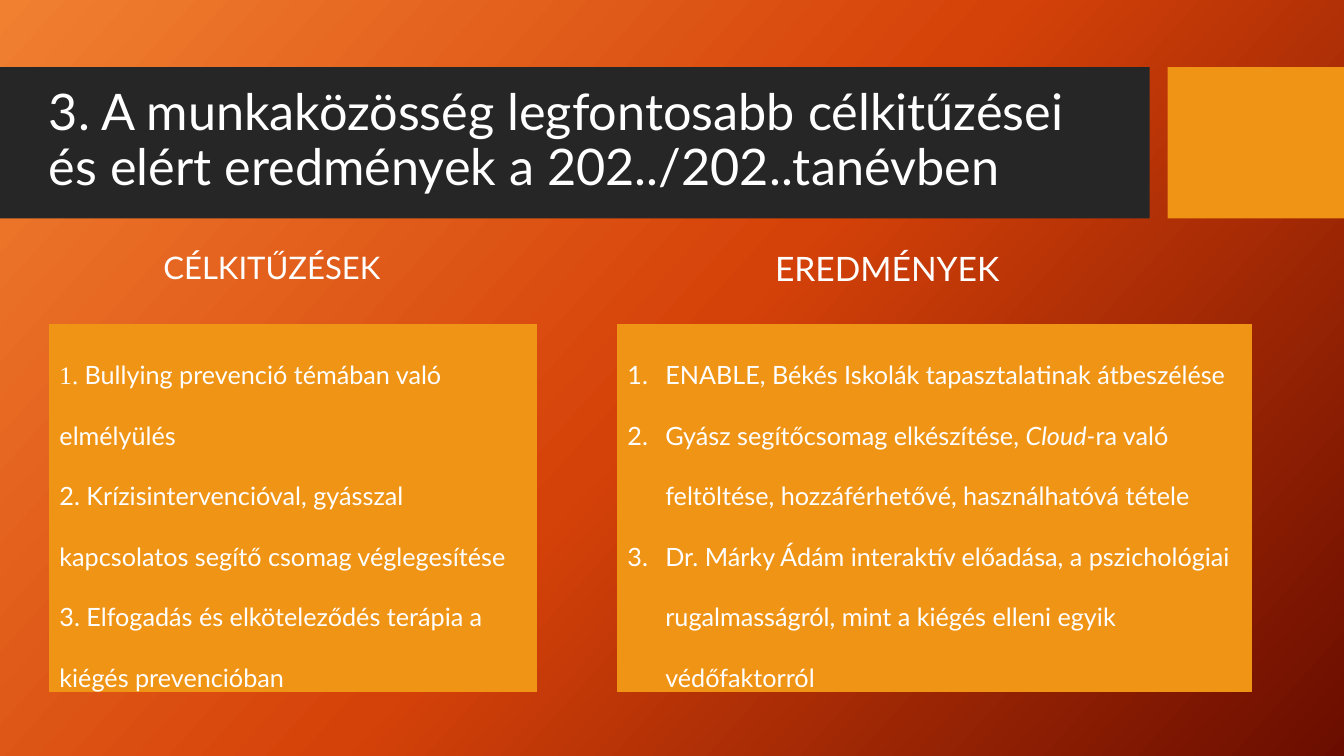
from copy import deepcopy
from dataclasses import dataclass

from lxml import etree
from pptx import Presentation
from pptx.dml.color import RGBColor
from pptx.enum.shapes import MSO_SHAPE
from pptx.enum.text import MSO_ANCHOR, MSO_AUTO_SIZE, PP_ALIGN
from pptx.oxml.ns import qn
from pptx.util import Pt

RECTANGLE = MSO_SHAPE.RECTANGLE
TOP, MIDDLE, BOTTOM = MSO_ANCHOR.TOP, MSO_ANCHOR.MIDDLE, MSO_ANCHOR.BOTTOM
LEFT, CENTER = PP_ALIGN.LEFT, PP_ALIGN.CENTER
NO_AUTOFIT = MSO_AUTO_SIZE.NONE

EMU_PER_PX = 9525
COMPARISON_LAYOUT = 4
FONT = "Lato"
WHITE, DARK, ORANGE = "FFFFFF", "262626", "F09415"
BACKGROUND_STOPS = [(0, "F18031"), (0.5, "D54209"), (1, "6A0D00")]
BACKGROUND_ANGLE = 318  # counter-clockwise
NUMBER_INDENT = 36


@dataclass
class Box:
    left: int
    top: int
    width: int
    height: int


@dataclass
class Band:
    box: Box
    color: str


@dataclass
class TextRun:
    text: str
    font: str = FONT
    italic: bool = False


@dataclass
class TextBlock:
    placeholder: int
    box: Box
    paragraphs: list[list[TextRun]]
    size: float
    line_spacing: float
    anchor: MSO_ANCHOR = TOP
    alignment: PP_ALIGN = LEFT
    bottom_inset: int = 5
    fill: str | None = None
    numbered: bool = False


BANDS = [
    Band(Box(0, 64, 1095, 144), DARK),
    Band(Box(1112, 64, 168, 144), ORANGE),
]

TEXT_BLOCKS = [
    TextBlock(0, Box(37, 86, 1037, 98), [[TextRun(
        "3. A munkaközösség legfontosabb célkitűzései és elért eredmények a 202../202..tanévben")]],
        36, 0.9, MIDDLE),
    TextBlock(1, Box(91, 216, 336, 60), [[TextRun("CÉLKITŰZÉSEK")]],
              22.2, 0.7, BOTTOM, CENTER),
    TextBlock(3, Box(677, 207, 336, 78), [[TextRun("EREDMÉNYEK")]],
              24, 0.8, BOTTOM, CENTER, bottom_inset=11),
    TextBlock(2, Box(47, 309, 464, 350), [
        [TextRun("1. ", "Times New Roman"), TextRun("Bullying prevenció témában való elmélyülés")],
        [TextRun("2. Krízisintervencióval, gyásszal kapcsolatos segítő csomag véglegesítése")],
        [TextRun("3. Elfogadás és elköteleződés terápia a kiégés prevencióban")],
    ], 18, 2.0, fill=ORANGE),
    TextBlock(4, Box(588, 309, 604, 350), [
        [TextRun("ENABLE, Békés Iskolák tapasztalatinak átbeszélése")],
        [TextRun("Gyász segítőcsomag elkészítése, "), TextRun("Cloud-", italic=True),
         TextRun("ra való feltöltése, hozzáférhetővé, használhatóvá tétele")],
        [TextRun("Dr. Márky Ádám interaktív előadása, a pszichológiai rugalmasságról, "
                 "mint a kiégés elleni egyik védőfaktorról")],
    ], 18, 2.0, fill=ORANGE, numbered=True),
]


def px(length: int) -> int:
    return length * EMU_PER_PX


def rgb(color: str) -> RGBColor:
    return RGBColor.from_string(color)


def apply_format(target, values: dict) -> None:
    for name, value in values.items():
        setattr(target, name, value)


def paint(shape, color: str) -> None:
    shape.fill.solid()
    shape.fill.fore_color.rgb = rgb(color)


def paint_background(slide) -> None:
    fill = slide.background.fill
    fill.gradient()
    fill.gradient_angle = BACKGROUND_ANGLE
    stop_list = slide.element.find(".//" + qn("a:gsLst"))
    stop_list.append(deepcopy(stop_list[0]))
    for stop, (position, color) in zip(fill.gradient_stops, BACKGROUND_STOPS):
        stop.position = position
        stop.color.rgb = rgb(color)


def draw_band(slide, band: Band) -> None:
    box = band.box
    shape = slide.shapes.add_shape(
        RECTANGLE, px(box.left), px(box.top), px(box.width), px(box.height))
    shape.shadow.inherit = False
    paint(shape, band.color)
    shape.line.fill.background()
    # Bands lie behind the placeholders
    shape.element.getparent().insert(2, shape.element)


def set_bullet(paragraph, numbered: bool) -> None:
    properties = paragraph._p.get_or_add_pPr()
    indent = px(NUMBER_INDENT) if numbered else 0
    properties.set("marL", str(indent))
    properties.set("indent", str(-indent))
    if numbered:
        etree.SubElement(properties, qn("a:buFont"), typeface=FONT)
        etree.SubElement(properties, qn("a:buAutoNum"), type="arabicPeriod")
    else:
        etree.SubElement(properties, qn("a:buNone"))


def fill_placeholder(slide, block: TextBlock) -> None:
    shape = slide.placeholders[block.placeholder]
    box = block.box
    apply_format(shape, {"left": px(box.left), "top": px(box.top),
                         "width": px(box.width), "height": px(box.height)})
    if block.fill:
        paint(shape, block.fill)
        shape.line.color.rgb = rgb(block.fill)
        shape.line.width = Pt(0.75)

    frame = shape.text_frame
    apply_format(frame, {"word_wrap": True, "auto_size": NO_AUTOFIT,
                         "vertical_anchor": block.anchor,
                         "margin_bottom": px(block.bottom_inset)})
    for index, text_runs in enumerate(block.paragraphs):
        paragraph = frame.add_paragraph() if index else frame.paragraphs[0]
        set_bullet(paragraph, block.numbered)
        apply_format(paragraph, {"alignment": block.alignment, "space_before": Pt(0),
                                 "line_spacing": block.line_spacing})
        for text_run in text_runs:
            run = paragraph.add_run()
            run.text = text_run.text
            apply_format(run.font, {"name": text_run.font, "size": Pt(block.size),
                                    "bold": False, "italic": text_run.italic})
            run.font.color.rgb = rgb(WHITE)


def main() -> None:
    presentation = Presentation()
    presentation.slide_width, presentation.slide_height = px(1280), px(720)
    slide = presentation.slides.add_slide(presentation.slide_layouts[COMPARISON_LAYOUT])
    paint_background(slide)
    for band in BANDS:
        draw_band(slide, band)
    for block in TEXT_BLOCKS:
        fill_placeholder(slide, block)
    presentation.save("out.pptx")


if __name__ == "__main__":
    main()
